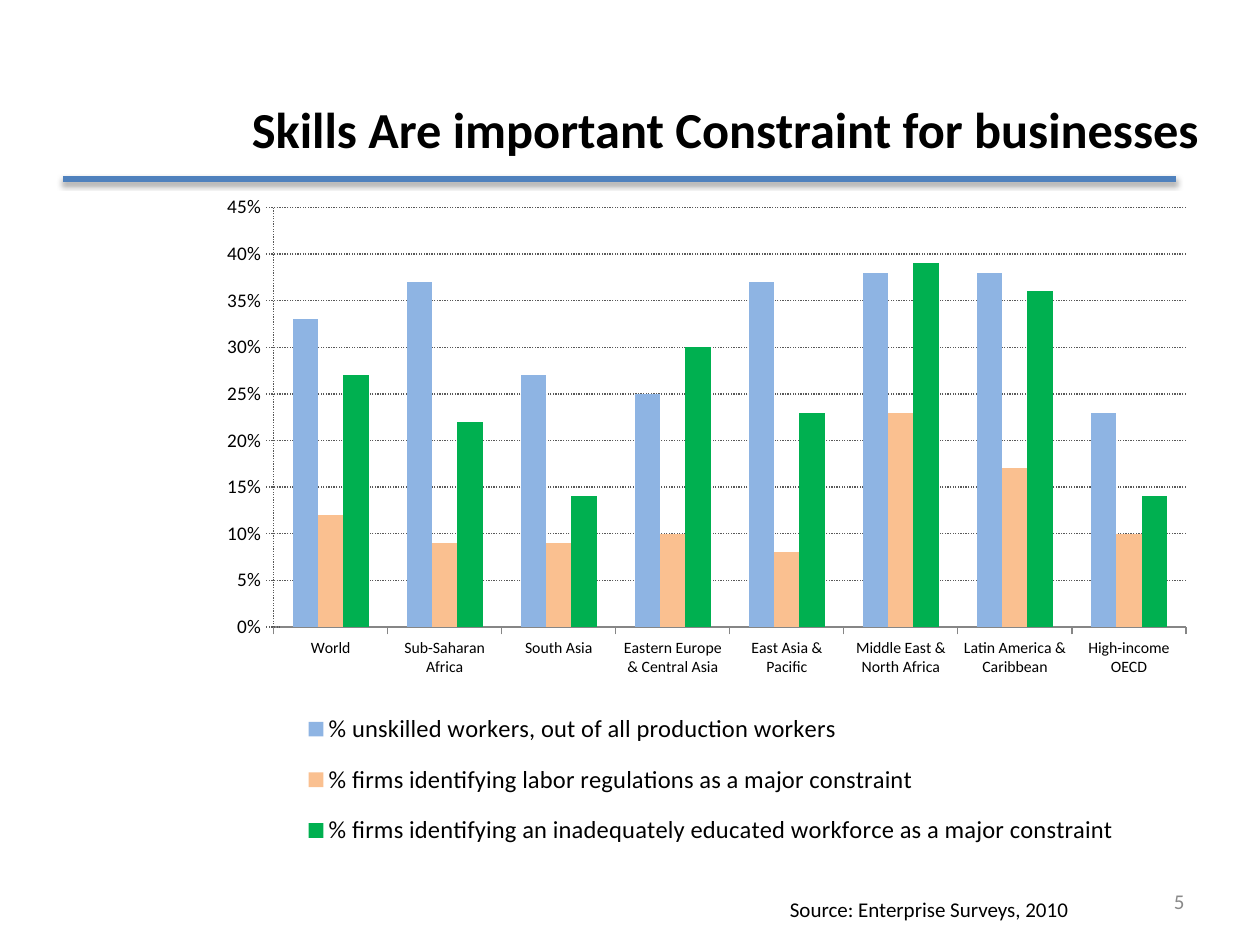
from lxml import etree
from pptx import Presentation
from pptx.chart.data import CategoryChartData
from pptx.dml.color import RGBColor
from pptx.enum.chart import XL_CHART_TYPE, XL_LEGEND_POSITION, XL_TICK_MARK
from pptx.enum.dml import MSO_LINE
from pptx.enum.shapes import MSO_CONNECTOR
from pptx.enum.text import MSO_ANCHOR, PP_ALIGN
from pptx.oxml import parse_xml
from pptx.oxml.ns import nsdecls, qn
from pptx.util import Inches, Pt

COLUMN_CLUSTERED = XL_CHART_TYPE.COLUMN_CLUSTERED
LEGEND_RIGHT = XL_LEGEND_POSITION.RIGHT
TICK_CROSS, TICK_OUTSIDE = XL_TICK_MARK.CROSS, XL_TICK_MARK.OUTSIDE
DOTTED = MSO_LINE.ROUND_DOT
STRAIGHT = MSO_CONNECTOR.STRAIGHT
TOP, MIDDLE = MSO_ANCHOR.TOP, MSO_ANCHOR.MIDDLE
LEFT, CENTER, RIGHT = PP_ALIGN.LEFT, PP_ALIGN.CENTER, PP_ALIGN.RIGHT

FONT = "Calibri"
BLACK = RGBColor(0x00, 0x00, 0x00)
GRID_GRAY = RGBColor(0x59, 0x59, 0x59)
AXIS_GRAY = RGBColor(0x86, 0x86, 0x86)
NUMBER_GRAY = RGBColor(0x89, 0x89, 0x89)
RULE_BLUE = RGBColor(0x4F, 0x81, 0xBD)

REGIONS = [
    "World", "Sub-Saharan Africa", "South Asia", "Eastern Europe & Central Asia",
    "East Asia & Pacific", "Middle East & North Africa",
    "Latin America & Caribbean", "High-income OECD",
]
SERIES = [
    ("% unskilled workers, out of all production workers",
     RGBColor(0x8E, 0xB4, 0xE3),
     (0.33, 0.37, 0.27, 0.25, 0.37, 0.38, 0.38, 0.23)),
    ("% firms identifying labor regulations as a major constraint",
     RGBColor(0xFA, 0xC0, 0x90),
     (0.12, 0.09, 0.09, 0.10, 0.08, 0.23, 0.17, 0.10)),
    ("% firms identifying an inadequately educated workforce as a major constraint",
     RGBColor(0x00, 0xB0, 0x50),
     (0.27, 0.22, 0.14, 0.30, 0.23, 0.39, 0.36, 0.14)),
]


def style_font(font, size, color=BLACK, bold=False):
    font.name = FONT
    font.size = Pt(size)
    font.bold = bold
    font.color.rgb = color


def set_text(shape, text, size, color=BLACK, bold=False, align=LEFT, anchor=TOP):
    frame = shape.text_frame
    frame.text = text
    frame.word_wrap = True
    frame.vertical_anchor = anchor
    paragraph = frame.paragraphs[0]
    paragraph.alignment = align
    style_font(paragraph.runs[0].font, size, color, bold)


def add_title(slide, left, top, width, height):
    title = slide.shapes.title
    title.left, title.top, title.width, title.height = left, top, width, height
    set_text(title, "Skills Are important Constraint for businesses", 28.8,
             bold=True, align=CENTER, anchor=MIDDLE)


def add_rule(slide, left, top, width):
    """Draw the shadowed line under the title."""
    rule = slide.shapes.add_connector(STRAIGHT, left, top, left + width, top)
    rule.line.color.rgb = RULE_BLUE
    rule.line.width = Pt(3)
    rule._element.spPr.append(parse_xml(
        f'<a:effectLst {nsdecls("a")}>'
        f'<a:outerShdw blurRad="{Pt(3.1)}" dist="{Pt(1.8)}" dir="5400000" rotWithShape="0">'
        '<a:srgbClr val="000000"><a:alpha val="35000"/></a:srgbClr>'
        '</a:outerShdw></a:effectLst>'))


def set_layout(parent, index, x, y, w, h, inner=False):
    """Fix a chart part's place, in fractions of the chart's size."""
    for old in parent.findall(qn("c:layout")):
        parent.remove(old)
    layout = etree.Element(qn("c:layout"))
    manual = etree.SubElement(layout, qn("c:manualLayout"))
    settings = [("layoutTarget", "inner")] if inner else []
    settings += [("xMode", "edge"), ("yMode", "edge"),
                 ("x", x), ("y", y), ("w", w), ("h", h)]
    for name, value in settings:
        etree.SubElement(manual, qn(f"c:{name}")).set("val", str(value))
    parent.insert(index, layout)


def style_line(line, color, dotted=False):
    line.color.rgb = color
    line.width = Pt(0.75)
    if dotted:
        line.dash_style = DOTTED


def style_axes(chart):
    category_axis, value_axis = chart.category_axis, chart.value_axis
    category_axis.major_tick_mark = TICK_OUTSIDE
    style_font(category_axis.tick_labels.font, 9)
    style_line(category_axis.format.line, AXIS_GRAY)

    value_axis.minimum_scale, value_axis.maximum_scale = 0, 0.45
    value_axis.major_unit = 0.05
    value_axis.major_tick_mark = TICK_CROSS
    value_axis.has_major_gridlines = True
    value_axis.tick_labels.number_format = "0%"
    value_axis.tick_labels.number_format_is_linked = False
    style_font(value_axis.tick_labels.font, 11)
    for line in (value_axis.format.line, value_axis.major_gridlines.format.line):
        style_line(line, GRID_GRAY, dotted=True)


def add_constraints_chart(slide, left, top, width, height):
    data = CategoryChartData(number_format="0%")
    data.categories = REGIONS
    for name, _, values in SERIES:
        data.add_series(name, values)
    chart = slide.shapes.add_chart(
        COLUMN_CLUSTERED, left, top, width, height, data).chart
    chart.has_title = False
    style_font(chart.font, 10)

    plot = chart.plots[0]
    plot.vary_by_categories = False
    plot.gap_width, plot.overlap = 150, 0
    for series, (_, color, _) in zip(plot.series, SERIES):
        series.format.fill.solid()
        series.format.fill.fore_color.rgb = color
    style_axes(chart)

    chart.has_legend = True
    legend = chart.legend
    legend.position = LEGEND_RIGHT
    legend.include_in_layout = False
    style_font(legend.font, 14)
    set_layout(legend._element, 1, 0.083, 0.742, 0.86, 0.257)
    plot_area = chart._chartSpace.chart.plotArea
    set_layout(plot_area, 0, 0.101, 0.018, 0.859, 0.625, inner=True)


def add_footer(slide, left, top, width, height):
    """Place the source note and, higher and further right, the page number."""
    source = slide.shapes.add_textbox(left, top + Inches(0.12), width, Inches(0.3))
    set_text(source, "Source: Enterprise Surveys, 2010", 12)
    number_width = Inches(2.33)
    number_left = left + width - Inches(0.25) - number_width
    number = slide.shapes.add_textbox(number_left, top, number_width, height)
    set_text(number, "5", 12, NUMBER_GRAY, align=RIGHT, anchor=MIDDLE)


def main():
    presentation = Presentation()
    presentation.slide_width, presentation.slide_height = Inches(10), Inches(7.5)
    slide = presentation.slides.add_slide(presentation.slide_layouts[5])
    add_title(slide, Inches(1.77), Inches(0.5), Inches(7.98), Inches(1.03))
    add_constraints_chart(slide, Inches(1.32), Inches(1.55), Inches(8.43), Inches(5.33))
    add_rule(slide, Inches(0.5), Inches(1.42), Inches(8.83))
    add_footer(slide, Inches(6.17), Inches(6.95), Inches(3.58), Inches(0.4))
    presentation.save("out.pptx")


if __name__ == "__main__":
    main()
